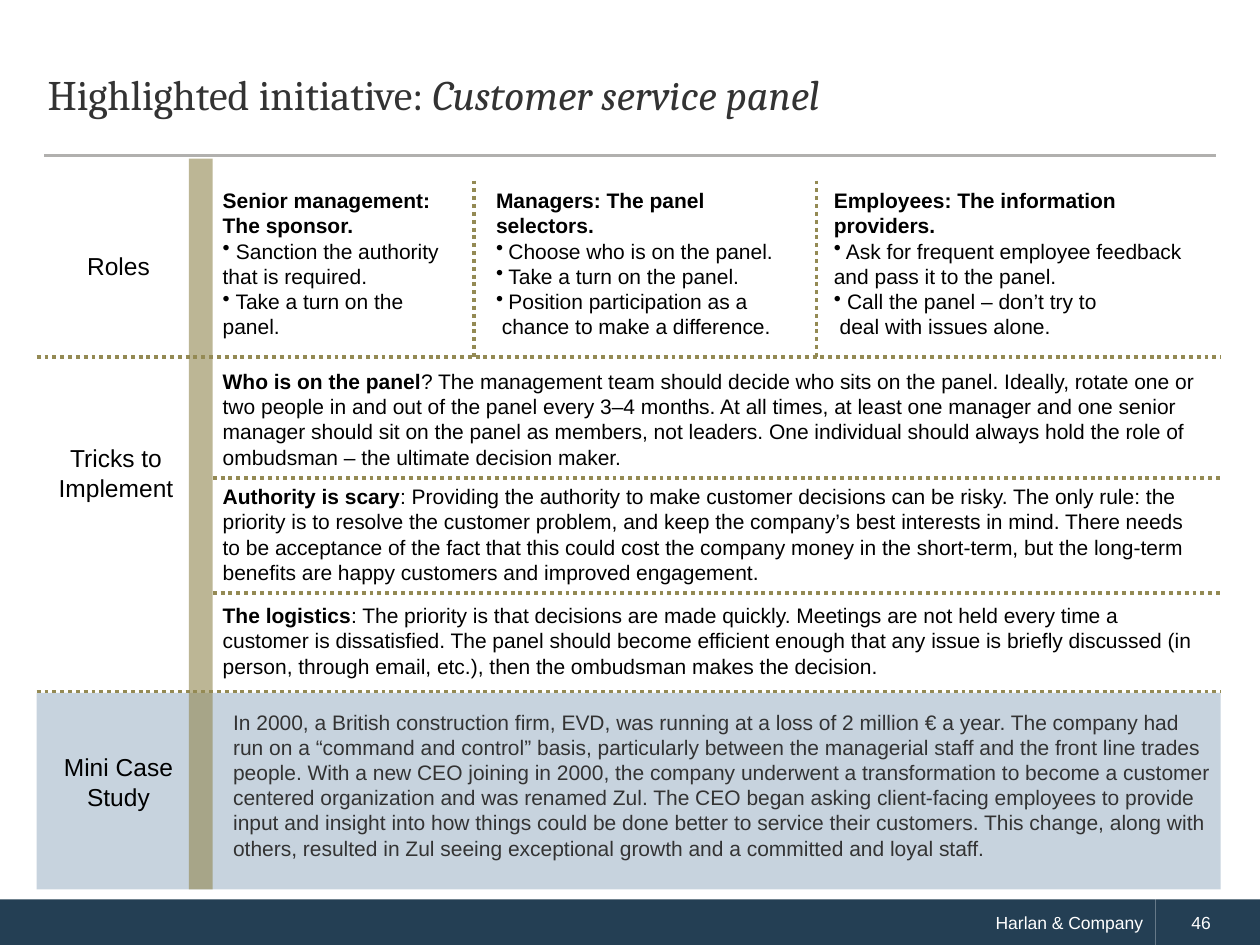
from lxml import etree
from pptx import Presentation
from pptx.dml.color import RGBColor
from pptx.enum import dml, shapes, text
from pptx.oxml.ns import qn
from pptx.util import Cm, Pt

NAVY = RGBColor(0x24, 0x3F, 0x54)
OLIVE = RGBColor(0x94, 0x8A, 0x54)
TINT = RGBColor(0xC7, 0xD3, 0xDE)
RULE = RGBColor(0xB1, 0xB0, 0xAE)
CHARCOAL = RGBColor(0x33, 0x33, 0x33)
BLACK = RGBColor(0, 0, 0)
WHITE = RGBColor(0xFF, 0xFF, 0xFF)

TOP, MIDDLE = text.MSO_ANCHOR.TOP, text.MSO_ANCHOR.MIDDLE
LEFT, CENTER, RIGHT = text.PP_ALIGN.LEFT, text.PP_ALIGN.CENTER, text.PP_ALIGN.RIGHT
BODY = {"name": "Arial", "size": Pt(12)}
LABEL = {"name": "Arial", "size": Pt(14)}
FOOT = {"name": "Arial", "size": Pt(10)}
TITLE = {"name": "Cambria", "size": Pt(24)}

LABEL_W = 3.3      # width of the row labels
TEXT_DX = 3.5      # start of the text column within a row
TEXT_W = 20.32
LINES_DX = 3.55    # start of the inner separators

# Heading, hanging indent, then (bulleted, line)
ROLES = [
    ("Senior management: The sponsor.", 0,
     [(True, " Sanction the authority that is required."),
      (True, " Take a turn on the panel.")]),
    ("Managers: The panel selectors.", 0.25,
     [(True, "Choose who is on the panel."),
      (True, "Take a turn on the panel."),
      (True, "Position participation as a"),
      (False, " chance to make a difference.")]),
    ("Employees: The information providers.", 0,
     [(True, " Ask for frequent employee feedback and pass it to the panel."),
      (True, " Call the panel – don’t try to"),
      (False, " deal with issues alone.")]),
]
ROLE_COLUMNS = [(3.5, 5.21), (9.01, 6.71), (15.82, 8)]
ROLE_DIVIDERS = [8.81, 15.72]

# Lead words, text, top and height within the row
TRICKS = [
    ("Who is on the panel",
     "? The management team should decide who sits on the panel. Ideally, rotate one or two "
     "people in and out of the panel every 3–4 months. At all times, at least one manager and "
     "one senior manager should sit on the panel as members, not leaders. One individual should "
     "always hold the role of ombudsman – the ultimate decision maker.", 0.1, 2.31),
    ("Authority is scary",
     ": Providing the authority to make customer decisions can be risky. The only rule: the "
     "priority is to resolve the customer problem, and keep the company’s best interests in "
     "mind. There needs to be acceptance of the fact that this could cost the company money in "
     "the short-term, but the long-term benefits are happy customers and improved engagement.",
     2.49, 2.18),
    ("The logistics",
     ": The priority is that decisions are made quickly. Meetings are not held every time a "
     "customer is dissatisfied. The panel should become efficient enough that any issue is "
     "briefly discussed (in person, through email, etc.), then the ombudsman makes the "
     "decision.", 4.85, 1.75),
]
TRICK_DIVIDERS = [2.44, 4.77]

CASE = (
    "In 2000, a British construction firm, EVD, was running at a loss of 2 million € a year. The "
    "company had run on a “command and control” basis, particularly between the managerial staff "
    "and the front line trades people. With a new CEO joining in 2000, the company underwent a "
    "transformation to become a customer centered organization and was renamed Zul. The CEO began "
    "asking client-facing employees to provide input and insight into how things could be done "
    "better to service their customers. This change, along with others, resulted in Zul seeing "
    "exceptional growth and a committed and loyal staff.")


def add_run(p, words, color, **fmt):
    r = p.add_run()
    r.text = words
    for key, value in fmt.items():
        setattr(r.font, key, value)
    r.font.color.rgb = color


def frame(sp, anchor):
    tf = sp.text_frame
    tf.word_wrap = True
    tf.vertical_anchor = anchor
    return tf


def add_text(s, x, y, w, h, anchor=TOP):
    return frame(s.shapes.add_textbox(Cm(x), Cm(y), Cm(w), Cm(h)), anchor)


def add_rect(s, x, y, w, h, fill, alpha=None):
    sp = s.shapes.add_shape(shapes.MSO_SHAPE.RECTANGLE, Cm(x), Cm(y), Cm(w), Cm(h))
    sp.shadow.inherit = False
    sp.fill.solid()
    sp.fill.fore_color.rgb = fill
    sp.line.fill.background()
    if alpha:
        clr = sp.fill._xPr.find(qn("a:solidFill"))[0]
        etree.SubElement(clr, qn("a:alpha")).set("val", str(alpha * 1000))
    return sp


def add_line(s, x1, y1, x2, y2, color=OLIVE, width=2.25, dash=dml.MSO_LINE.ROUND_DOT):
    ln = s.shapes.add_connector(shapes.MSO_CONNECTOR.STRAIGHT, Cm(x1), Cm(y1), Cm(x2), Cm(y2))
    ln.line.color.rgb = color
    ln.line.width = Pt(width)
    ln.line.dash_style = dash
    etree.SubElement(ln._element.spPr, qn("a:effectLst"))


def indent(p, left, first=0, bullet=False):
    pPr = p._p.get_or_add_pPr()
    pPr.set("marL", str(Cm(left)))
    pPr.set("indent", str(Cm(first)))
    if bullet:
        etree.SubElement(pPr, qn("a:buChar")).set("char", "•")


def add_label(s, x, y, words):
    p = add_text(s, x, y, LABEL_W, 0.86).paragraphs[0]
    p.alignment = CENTER
    add_run(p, words, BLACK, **LABEL)


def header(s, x, y, w, h):
    add_line(s, x + 0.18, y + h, x + w - 0.15, y + h, RULE, 1.75, dml.MSO_LINE.SOLID)
    p = add_text(s, x, y, w, h, MIDDLE).paragraphs[0]
    p.line_spacing = Pt(26)
    add_run(p, "Highlighted initiative: ", CHARCOAL, **TITLE)
    add_run(p, "Customer service panel", CHARCOAL, italic=True, **TITLE)


def roles(s, x, y, w, h):
    add_label(s, x, y + 1.73, "Roles")
    for (dx, cw), (heading, hang, lines) in zip(ROLE_COLUMNS, ROLES):
        tf = add_text(s, x + dx, y + 0.46, cw, 3.33)
        add_run(tf.paragraphs[0], heading, BLACK, bold=True, **BODY)
        for bullet, words in lines:
            p = tf.add_paragraph()
            indent(p, hang, -hang, bullet)
            add_run(p, words, BLACK, **BODY)
    for dx in ROLE_DIVIDERS:
        add_line(s, x + dx, y + 0.44, x + dx, y + h)
    add_line(s, x, y + h, x + w, y + h)


def tricks(s, x, y, w, h):
    add_label(s, x - 0.05, y + 1.62, "Tricks to Implement")
    for lead, words, dy, th in TRICKS:
        p = add_text(s, x + TEXT_DX, y + dy, TEXT_W, th, MIDDLE).paragraphs[0]
        add_run(p, lead, BLACK, bold=True, **BODY)
        add_run(p, words, BLACK, **BODY)
    for dy in TRICK_DIVIDERS:
        add_line(s, x + LINES_DX, y + dy, x + w, y + dy)
    add_line(s, x, y + h, x + w, y + h)


def case_study(s, x, y, w, h):
    add_label(s, x, y + 1.07, "Mini Case Study")
    p = add_text(s, x + 3.71, y + 0.2, 20.22, 3.33).paragraphs[0]
    add_run(p, CASE, CHARCOAL, **BODY)


def body(s, x, y, w, h):
    # Row heights; the last row fills the rest
    roles_h, tricks_h = 3.99, 6.75
    case_y = y + roles_h + tricks_h
    case_box = (x, case_y + 0.03, w, h - roles_h - tricks_h - 0.03)
    # Tinted row and the vertical bar stand behind the text
    add_rect(s, *case_box, TINT)
    add_rect(s, x + 3.07, y, 0.48, h, OLIVE, 62)
    roles(s, x, y, w, roles_h)
    tricks(s, x, y + roles_h, w, tricks_h)
    case_study(s, *case_box)


def footer(s, x, y, w, h):
    page_w = 2.11
    cells = [(x, w - page_w, "Harlan & Company", RIGHT, 0.74),
             (x + w - page_w, page_w, "46", LEFT, 0.48)]
    for cx, cw, words, align, left in cells:
        p = frame(add_rect(s, cx, y, cw, h, NAVY), MIDDLE).paragraphs[0]
        p.alignment = align
        indent(p, left)
        add_run(p, words, WHITE, **FOOT)


def main():
    prs = Presentation()
    prs.slide_width, prs.slide_height = Cm(25.4), Cm(19.05)
    s = prs.slides.add_slide(prs.slide_layouts[6])
    footer(s, 0, 18.13, 25.4, 0.92)
    header(s, 0.71, 0.74, 23.95, 2.39)
    body(s, 0.74, 3.2, 23.87, 14.73)
    prs.save("out.pptx")


if __name__ == "__main__":
    main()
